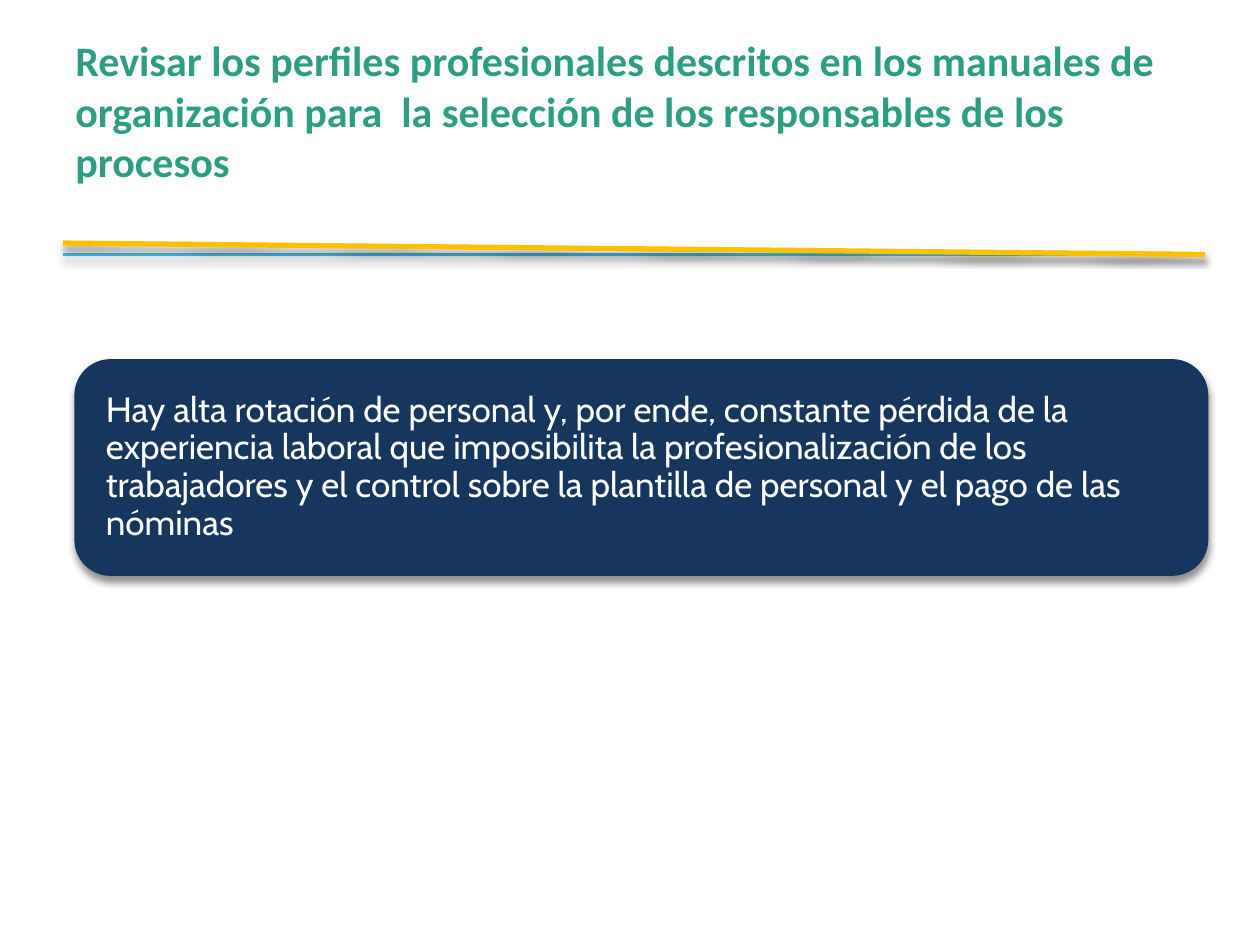
from lxml import etree
from pptx import Presentation, util as u
from pptx.dml.color import RGBColor
from pptx.enum import shapes, text
from pptx.oxml import ns

HUES = {"title": "2E9E83", "panel": "17365D", "body": "FFFFFF",
        "blue": "48BCE0", "gold": "FFC000", "shade": "000000"}


class Deck:
    """Holds the style and the current slide, and draws each kind of element."""

    def __init__(self, wide, high):
        self.prs = Presentation()
        self.prs.slide_width, self.prs.slide_height = u.Cm(wide), u.Cm(high)
        self.slide = self.prs.slides.add_slide(self.prs.slide_layouts[6])

    def hue(self, name):
        return RGBColor.from_string(HUES[name])

    def shade(self, item):
        props = item._element.spPr
        for old in props.findall(ns.qn("a:effectLst")):
            props.remove(old)
        effect = etree.SubElement(props, ns.qn("a:effectLst"))
        outer = etree.SubElement(effect, ns.qn("a:outerShdw"), blurRad=str(u.Pt(4)),
                                 dist=str(u.Pt(3)), dir="5400000", rotWithShape="0")
        color = etree.SubElement(outer, ns.qn("a:srgbClr"), val=HUES["shade"])
        etree.SubElement(color, ns.qn("a:alpha"), val="43000")

    def label(self, shape, words, font, size, hue, bold=False):
        frame = shape.text_frame
        frame.word_wrap = True
        frame.text = words
        para = frame.paragraphs[0]
        para.alignment = text.PP_ALIGN.LEFT
        style = para.runs[0].font
        style.name, style.size, style.bold = font, u.Pt(size), bold
        style.color.rgb = self.hue(hue)
        return frame

    def title(self, words, *box):
        shape = self.slide.shapes.add_textbox(*map(u.Cm, box))
        frame = self.label(shape, words, "Calibri", 24, "title", True)
        frame.vertical_anchor = text.MSO_ANCHOR.TOP
        frame.margin_top = 0

    def line(self, start, end, hue, width):
        link = self.slide.shapes.add_connector(
            shapes.MSO_CONNECTOR.STRAIGHT, *map(u.Cm, start + end))
        link.line.color.rgb = self.hue(hue)
        link.line.width = u.Pt(width)
        self.shade(link)

    def panel(self, words, *box):
        shape = self.slide.shapes.add_shape(
            shapes.MSO_SHAPE.ROUNDED_RECTANGLE, *map(u.Cm, box))
        shape.fill.solid()
        shape.fill.fore_color.rgb = self.hue("panel")
        shape.line.fill.background()
        self.shade(shape)
        frame = self.label(shape, words, "Cabin", 20, "body")
        frame.vertical_anchor = text.MSO_ANCHOR.MIDDLE
        frame.margin_left = frame.margin_right = u.Cm(0.42)
        frame.paragraphs[0].line_spacing = 0.9


def main():
    deck = Deck(25.4, 19.05)
    deck.title("Revisar los perfiles profesionales descritos en los manuales de "
               "organización para  la selección de los responsables de los procesos",
               1.27, 0.7, 22.86, 3.96)
    left, right, base = 1.27, 24.3, 5.13
    deck.line((left, base), (right, base), "blue", 1.5)
    deck.line((left, 4.9), (right, base), "gold", 3)
    deck.panel("Hay alta rotación de personal y, por ende, constante pérdida de la "
               "experiencia laboral que imposibilita la profesionalización de los "
               "trabajadores y el control sobre la plantilla de personal y el pago "
               "de las nóminas", 1.5, 7.24, 22.86, 4.37)
    deck.prs.save("out.pptx")


if __name__ == "__main__":
    main()
